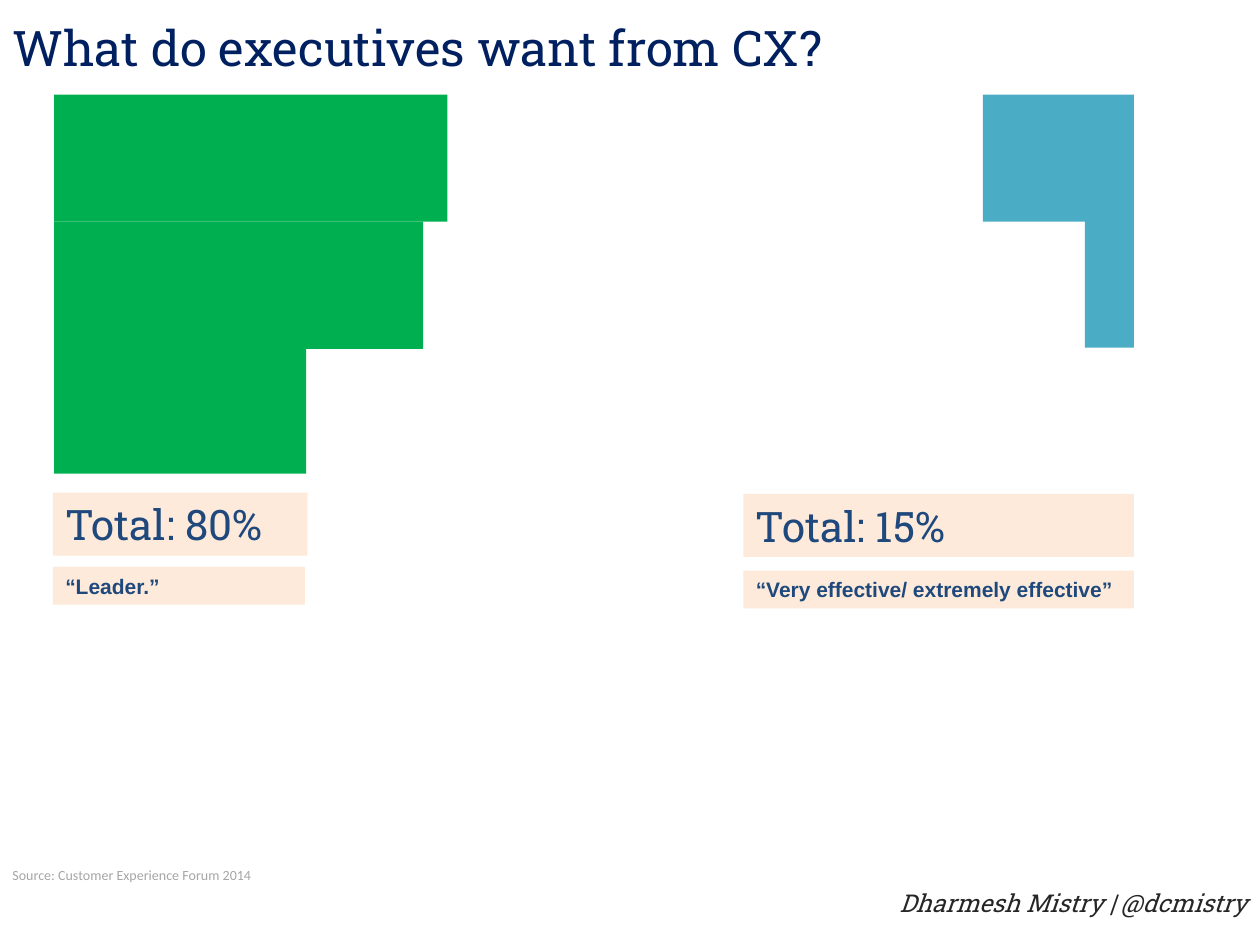
from pptx import Presentation
from pptx.dml.color import RGBColor
from pptx.enum.shapes import MSO_SHAPE as Shape
from pptx.enum.text import MSO_ANCHOR as Anchor, PP_ALIGN as Align
from pptx.util import Inches, Pt

NAVY = RGBColor(0x00, 0x20, 0x60)
BLUE = RGBColor(0x1F, 0x49, 0x7D)
GREEN = RGBColor(0x00, 0xB0, 0x50)
TEAL = RGBColor(0x4B, 0xAC, 0xC6)
PEACH = RGBColor(0xFD, 0xEA, 0xDA)
GRAY = RGBColor(0xA6, 0xA6, 0xA6)
DARK = RGBColor(0x26, 0x26, 0x26)
SLAB, SANS, SMALL = "Roboto Slab", "Arial", "Calibri"


class SlideBuilder:
    def __init__(self, slide):
        self.slide = slide

    def bar(self, left, top, width, height, color):
        bar = self.slide.shapes.add_shape(
            Shape.RECTANGLE, Inches(left), Inches(top), Inches(width), Inches(height))
        bar.shadow.inherit = False
        bar.fill.solid()
        bar.fill.fore_color.rgb = color
        bar.line.fill.background()
        return bar

    def add_words(self, box, text, font, size, color, bold=False, italic=False,
                  align=Align.LEFT, anchor=Anchor.TOP, wrap=True):
        frame = box.text_frame
        frame.word_wrap = wrap
        frame.vertical_anchor = anchor
        para = frame.paragraphs[0]
        para.alignment = align
        span = para.add_run()
        span.text = text
        span.font.name = font
        span.font.size = Pt(size)
        span.font.color.rgb = color
        span.font.bold = bold
        span.font.italic = italic

    def text(self, left, top, width, height, *content, **style):
        box = self.slide.shapes.add_textbox(
            Inches(left), Inches(top), Inches(width), Inches(height))
        self.add_words(box, *content, **style)

    def label(self, left, top, width, height, *content, **style):
        self.add_words(self.bar(left, top, width, height, PEACH), *content, **style)


def main():
    deck = Presentation()
    deck.slide_width, deck.slide_height = Inches(10), Inches(7.5)
    page = SlideBuilder(deck.slides.add_slide(deck.slide_layouts[6]))

    # Title and source
    page.text(0, 0, 9.5, 0.75, "What do executives want from CX?",
              SLAB, 28, NAVY, anchor=Anchor.MIDDLE)
    page.text(0, 6.83, 2.69, 0.24, "Source: Customer Experience Forum 2014",
              SMALL, 8, GRAY)

    # Green steps share a left edge, teal steps a right edge
    bar_height, right_edge = 1.01, 9
    for top, width in ((0.75, 3.12), (1.76, 2.93), (2.75, 2)):
        page.bar(0.43, top, width, bar_height, GREEN)
    for top, width in ((0.75, 1.2), (1.75, 0.39)):
        page.bar(right_edge - width, top, width, bar_height, TEAL)

    # Totals with the answers they count
    page.label(0.42, 3.91, 2.02, 0.5, "Total: 80%", SLAB, 24, BLUE)
    page.label(0.42, 4.5, 2, 0.3, "“Leader.”", SANS, 12, BLUE, bold=True)
    page.label(5.9, 3.92, 3.1, 0.5, "Total: 15%", SLAB, 24, BLUE)
    page.label(5.9, 4.53, 3.1, 0.3, "“Very effective/ extremely effective”",
               SANS, 12, BLUE, bold=True, wrap=False)

    # Presenter
    page.text(4.33, 7, 5.67, 0.5, "Dharmesh Mistry | @dcmistry",
              SLAB, 14, DARK, italic=True, align=Align.RIGHT)

    deck.save("out.pptx")


if __name__ == "__main__":
    main()
